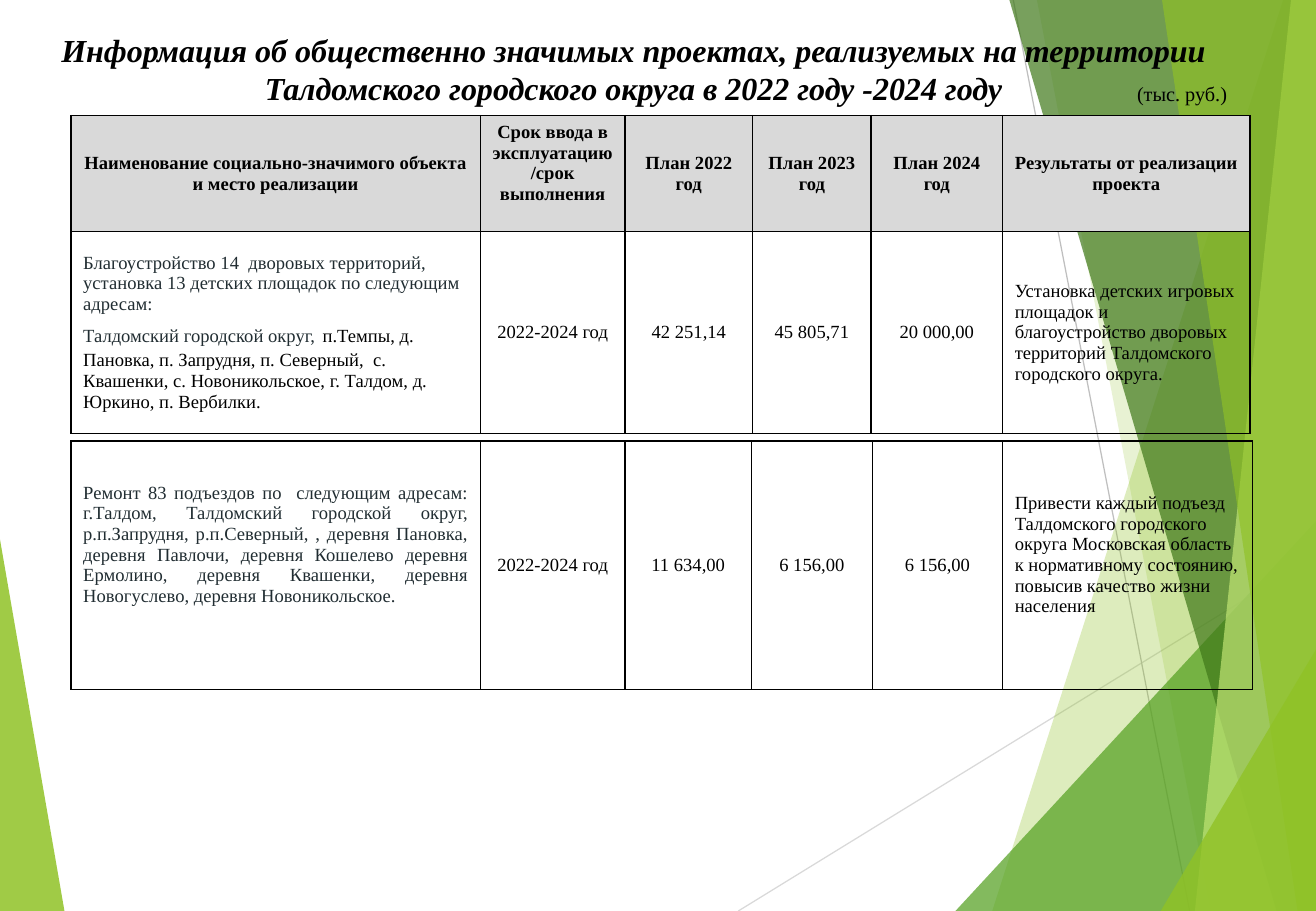
"""Build the slide on public projects of the Taldom district."""
from dataclasses import dataclass

from lxml.etree import SubElement
from pptx import Presentation
from pptx.dml.color import RGBColor
from pptx.enum.shapes import MSO_CONNECTOR
from pptx.enum.text import MSO_ANCHOR, MSO_AUTO_SIZE, PP_ALIGN
from pptx.oxml.ns import qn
from pptx.util import Inches, Pt

WIDE, HIGH = Inches(10.83), Inches(7.5)
LEFT, MID, FULL = PP_ALIGN.LEFT, PP_ALIGN.CENTER, PP_ALIGN.JUSTIFY


@dataclass(frozen=True)
class Theme:
    font: str = "Times New Roman"
    gap_font: str = "Karla"
    title: int = 19
    unit: int = 12
    body: int = 11
    gap: int = 18
    black: str = "000000"
    slate: str = "212D32"
    head: str = "D9D9D9"
    pale: str = "D9D9D9"
    grey: str = "BFBFBF"
    lime: str = "90C226"
    green: str = "54A021"
    dark: str = "3F7819"
    light: str = "C0E474"


@dataclass(frozen=True)
class Cell:
    lines: tuple
    align: PP_ALIGN = MID
    color: str = Theme.black
    bold: bool = False
    fill: str = ""
    lift: float = 0


THEME = Theme()


def across(share):
    return int(WIDE * share / 100)


def down(share):
    return int(HIGH * share / 100)


def place(x, y, w, h):
    return across(x), down(y), across(w), down(h)


def style(run, size, color=THEME.black, font=THEME.font, bold=False, italic=False):
    face = run.font
    face.name, face.size = font, Pt(size)
    face.bold, face.italic = bold, italic
    face.color.rgb = RGBColor.from_string(color)


def draw_facet(slide, points, color, alpha):
    start, *rest = [(across(x), down(y)) for x, y in points]
    pen = slide.shapes.build_freeform(*start)
    pen.add_line_segments(rest, close=True)
    facet = pen.convert_to_shape()
    facet.shadow.inherit = False
    facet.line.fill.background()
    facet.fill.solid()
    facet.fill.fore_color.rgb = RGBColor.from_string(color)
    tint = facet.fill._xPr.find(qn("a:solidFill"))[0]
    SubElement(tint, qn("a:alpha"), val=str(alpha * 1000))


def draw_band(slide, top, base, color, alpha):
    draw_facet(slide, [(top, 0), (base, 100), (100, 100), (100, 0)], color, alpha)


def draw_wedge(slide, base, rise, color, alpha):
    draw_facet(slide, [(base, 100), (100, rise), (100, 100)], color, alpha)


def draw_line(slide, x1, y1, x2, y2, color):
    line = slide.shapes.add_connector(
        MSO_CONNECTOR.STRAIGHT, across(x1), down(y1), across(x2), down(y2))
    line.line.color.rgb = RGBColor.from_string(color)
    line.line.width = Pt(0.75)
    SubElement(line._element.spPr, qn("a:effectLst"))


def draw_decor(slide):
    draw_facet(slide, [(0, 59.2), (4.9, 100), (0, 100)], THEME.lime, 85)
    draw_line(slide, 56.1, 100, 100, 61, THEME.pale)
    draw_line(slide, 77, 0, 90.4, 100, THEME.grey)
    draw_band(slide, 97.5, 75.4, THEME.lime, 30)
    draw_band(slide, 78.8, 92, THEME.lime, 20)
    draw_wedge(slide, 72.6, 57.2, THEME.green, 72)
    draw_band(slide, 76.7, 97, THEME.dark, 70)
    draw_band(slide, 98.1, 90.8, THEME.light, 70)
    draw_band(slide, 88.3, 98.6, THEME.lime, 65)
    draw_wedge(slide, 88.2, 71.3, THEME.lime, 80)


def set_text(shape, box, text, size, align, bold=False):
    shape.left, shape.top, shape.width, shape.height = place(*box)
    frame = shape.text_frame
    frame.text = text
    frame.word_wrap = False
    frame.auto_size = MSO_AUTO_SIZE.NONE
    frame.vertical_anchor = MSO_ANCHOR.TOP
    frame.margin_left = frame.margin_right = 0
    frame.margin_top = frame.margin_bottom = 0
    for para in frame.paragraphs:
        para.alignment = align
        for run in para.runs:
            style(run, size, bold=bold, italic=bold)


def add_border(cell):
    props = cell._tc.get_or_add_tcPr()
    for spot, side in enumerate(("lnL", "lnR", "lnT", "lnB")):
        edge = props.makeelement(qn(f"a:{side}"), {"w": str(Pt(1))})
        props.insert(spot, edge)
        paint = SubElement(edge, qn("a:solidFill"))
        SubElement(paint, qn("a:srgbClr"), val=THEME.black)


def fill_cell(cell, data):
    cell.vertical_anchor = MSO_ANCHOR.MIDDLE
    cell.margin_bottom = Inches(0.05 + data.lift)
    if data.fill:
        cell.fill.solid()
        cell.fill.fore_color.rgb = RGBColor.from_string(data.fill)
    else:
        cell.fill.background()
    add_border(cell)
    frame = cell.text_frame
    for spot, line in enumerate(data.lines):
        para = frame.add_paragraph() if spot else frame.paragraphs[0]
        para.alignment = data.align
        pieces = [(line, data.color)] if isinstance(line, str) else line
        for text, color, *look in pieces:
            run = para.add_run()
            run.text = text
            size, font = look or (THEME.body, THEME.font)
            style(run, size, color, font, data.bold)


def draw_table(slide, top, cols, rows, cells):
    box = place(5.4, top, sum(cols), sum(rows))
    table = slide.shapes.add_table(len(rows), len(cols), *box).table
    table.first_row = table.horz_banding = False
    for col, share in zip(table.columns, cols):
        col.width = across(share)
    for row, share, line in zip(table.rows, rows, cells):
        row.height = down(share)
        for cell, data in zip(row.cells, line):
            fill_cell(cell, data)


def head(text, lift=0):
    return Cell((text,), bold=True, fill=THEME.head, lift=lift)


def main():
    deck = Presentation()
    deck.slide_width, deck.slide_height = WIDE, HIGH
    slide = deck.slides.add_slide(deck.slide_layouts[5])
    draw_decor(slide)
    title = slide.shapes.title
    slide.shapes._spTree.append(title._element)
    set_text(title, (2.15, 3.3, 92, 9),
             "Информация об общественно значимых проектах, реализуемых на территории\n"
             "Талдомского городского округа в 2022 году -2024 году", THEME.title, MID, True)

    heads = [head("Наименование социально-значимого объекта и место реализации"),
             head("Срок ввода в эксплуатацию /срок выполнения", 0.17),
             *(head(f"План {year} год") for year in (2022, 2023, 2024)),
             head("Результаты от реализации проекта")]
    towns = (("Талдомский городской округ,", THEME.slate),
             (" ", THEME.black, THEME.gap, THEME.gap_font),
             ("п.Темпы, д. Пановка, п. Запрудня, п. Северный,  с. Квашенки, "
              "с. Новоникольское, г. Талдом, д. Юркино, п. Вербилки.", THEME.black))
    yards = [Cell(("Благоустройство 14  дворовых территорий, установка 13 детских "
                   "площадок по следующим адресам:", towns), LEFT, THEME.slate),
             *(Cell((text,)) for text in
               ("2022-2024 год", "42 251,14", "45 805,71", "20 000,00")),
             Cell(("Установка детских игровых площадок и благоустройство дворовых "
                   "территорий Талдомского городского округа.",), LEFT)]
    halls = [Cell(("Ремонт 83 подъездов по  следующим адресам: г.Талдом, Талдомский "
                   "городской округ, р.п.Запрудня, р.п.Северный, , деревня Пановка, "
                   "деревня Павлочи, деревня Кошелево деревня Ермолино, деревня Квашенки, "
                   "деревня Новогуслево, деревня Новоникольское.",),
                  FULL, THEME.slate, lift=0.34),
             *(Cell((text,)) for text in
               ("2022-2024 год", "11 634,00", "6 156,00", "6 156,00")),
             Cell(("Привести каждый подъезд Талдомского городского округа Московская "
                   "область  к нормативному состоянию, повысив качество жизни населения",),
                  LEFT, lift=0.17)]
    draw_table(slide, 12.7, (31.1, 11, 9.7, 9, 10, 18.8), (12.7, 22.2), (heads, yards))
    draw_table(slide, 48.4, (31.1, 11, 9.6, 9.2, 9.9, 19), (27.3,), (halls,))
    unit = slide.shapes.add_textbox(0, 0, 0, 0)
    set_text(unit, (86.4, 8.9, 12.5, 3.2), "(тыс. руб.)", THEME.unit, LEFT)
    deck.save("out.pptx")


if __name__ == "__main__":
    main()
